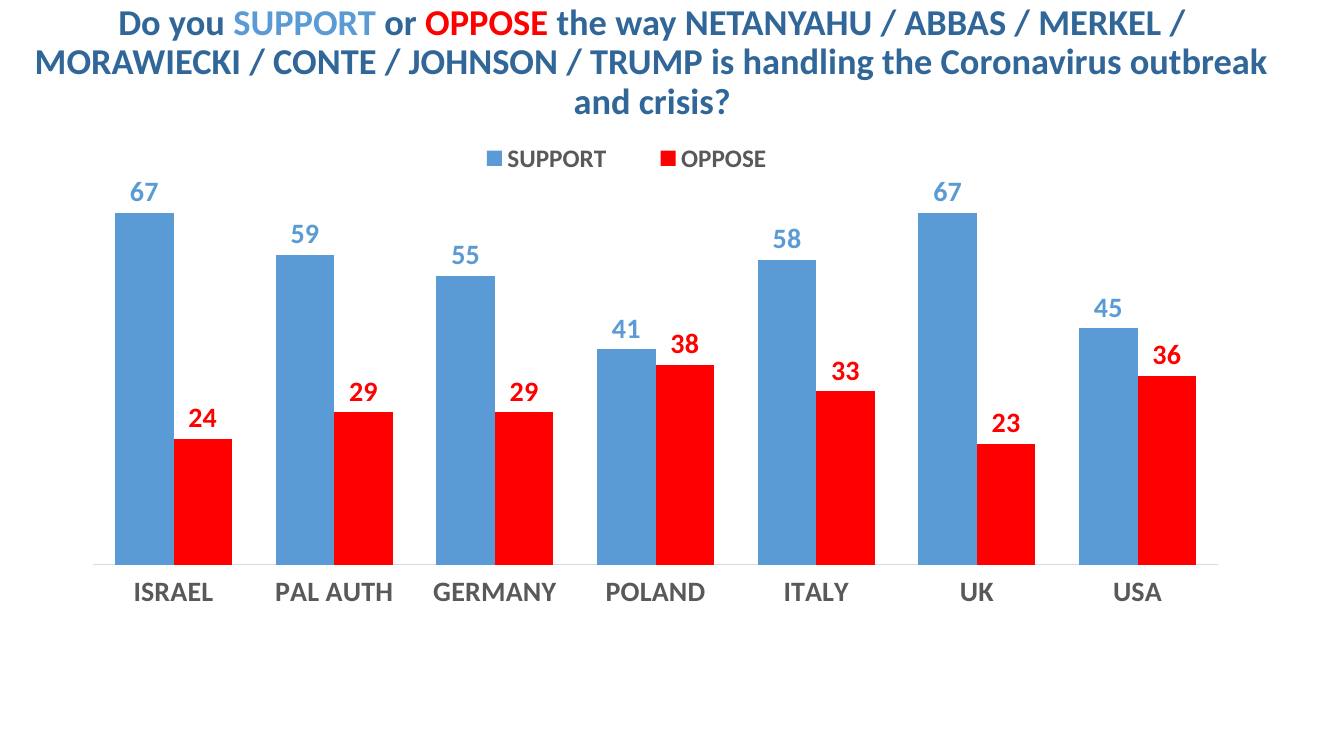
from lxml import etree
from pptx import Presentation
from pptx.chart.data import CategoryChartData
from pptx.dml.color import RGBColor
from pptx.enum.chart import XL_CHART_TYPE, XL_LABEL_POSITION, XL_LEGEND_POSITION, XL_TICK_LABEL_POSITION, XL_TICK_MARK
from pptx.enum.text import MSO_ANCHOR, MSO_AUTO_SIZE, PP_ALIGN
from pptx.oxml.ns import qn
from pptx.util import Inches, Pt

COLUMN = XL_CHART_TYPE.COLUMN_CLUSTERED
OUTSIDE_END = XL_LABEL_POSITION.OUTSIDE_END
BOTTOM = XL_LEGEND_POSITION.BOTTOM
LOW = XL_TICK_LABEL_POSITION.LOW
NO_TICK = XL_TICK_MARK.NONE
MIDDLE = MSO_ANCHOR.MIDDLE
NO_FIT = MSO_AUTO_SIZE.NONE
CENTER = PP_ALIGN.CENTER

COLORS = {
    "title": "306698",
    "support": "5B9BD5",
    "oppose": "FF0000",
    "label": "595959",
    "axis": "D9D9D9",
    "text": "000000",
}
TITLE = [
    ("Do you ", "title"),
    ("SUPPORT", "support"),
    (" or ", "title"),
    ("OPPOSE", "oppose"),
    (" the way NETANYAHU / ABBAS / MERKEL / MORAWIECKI / CONTE / JOHNSON / TRUMP"
     " is handling the Coronavirus outbreak and crisis?", "title"),
]
COUNTRIES = ["ISRAEL", "PAL AUTH", "GERMANY", "POLAND", "ITALY", "UK", "USA"]
RATINGS = {
    "support": [67, 59, 55, 41, 58, 67, 45],
    "oppose": [24, 29, 29, 38, 33, 23, 36],
}


class SlideBuilder:
    font_name = "Calibri"

    def __init__(self, slide):
        self.slide = slide

    def color(self, name):
        return RGBColor.from_string(COLORS[name])

    def style(self, font, size, color, bold=True):
        font.name = self.font_name
        font.size = Pt(size)
        font.bold = bold
        font.color.rgb = self.color(color)

    def title(self, runs, left, top, width, height):
        sp = self.slide.shapes.title
        sp.left, sp.top = Inches(left), Inches(top)
        sp.width, sp.height = Inches(width), Inches(height)
        tf = sp.text_frame
        tf.word_wrap = True
        tf.auto_size = NO_FIT
        tf.vertical_anchor = MIDDLE
        p = tf.paragraphs[0]
        p.alignment = CENTER
        p.line_spacing = 0.9
        for text, color in runs:
            r = p.add_run()
            r.text = text
            self.style(r.font, 26, color)

    def place(self, parent, index, left, top, width, height, inner=False):
        for old in parent.findall(qn("c:layout")):
            parent.remove(old)
        layout = etree.Element(qn("c:layout"))
        manual = etree.SubElement(layout, qn("c:manualLayout"))
        settings = [("layoutTarget", "inner")] if inner else []
        settings += [("xMode", "edge"), ("yMode", "edge"),
                     ("x", left), ("y", top), ("w", width), ("h", height)]
        for tag, value in settings:
            etree.SubElement(manual, qn(f"c:{tag}")).set("val", str(value))
        parent.insert(index, layout)

    def column_chart(self, categories, series, left, top, width, height):
        data = CategoryChartData()
        data.categories = categories
        for name, values in series.items():
            data.add_series(name.upper(), values)
        chart = self.slide.shapes.add_chart(
            COLUMN, Inches(left), Inches(top), Inches(width), Inches(height), data).chart
        self.style(chart.font, 10, "text", False)
        chart.has_title = False

        plot = chart.plots[0]
        plot.gap_width = 75
        plot.overlap = 0
        plot.vary_by_categories = False
        for name, bars in zip(series, plot.series):
            bars.format.fill.solid()
            bars.format.fill.fore_color.rgb = self.color(name)
            labels = bars.data_labels
            labels.show_value = True
            labels.position = OUTSIDE_END
            self.style(labels.font, 20, name)

        axis = chart.category_axis
        axis.major_tick_mark = axis.minor_tick_mark = NO_TICK
        axis.tick_label_position = LOW
        axis.format.line.color.rgb = self.color("axis")
        axis.format.line.width = Pt(0.75)
        self.style(axis.tick_labels.font, 20, "label")

        axis = chart.value_axis
        axis.visible = False
        axis.has_major_gridlines = False
        axis.minimum_scale, axis.maximum_scale = 0, 80

        chart.has_legend = True
        legend = chart.legend
        legend.position = BOTTOM
        legend.include_in_layout = False
        self.style(legend.font, 18, "label")
        self.place(legend._element, 1, 0.31, 0.03, 0.32, 0.09)
        plot_area = chart._chartSpace.chart.plotArea
        self.place(plot_area, 0, 0.01, 0.05, 0.97, 0.78, inner=True)


def main():
    prs = Presentation()
    prs.slide_width, prs.slide_height = Inches(13.33), Inches(7.5)
    s = SlideBuilder(prs.slides.add_slide(prs.slide_layouts[5]))
    s.title(TITLE, 0.21, 0.18, 12.52, 0.89)
    s.column_chart(COUNTRIES, RATINGS, 0.81, 1.17, 11.5, 5.34)
    prs.save("out.pptx")


if __name__ == "__main__":
    main()
